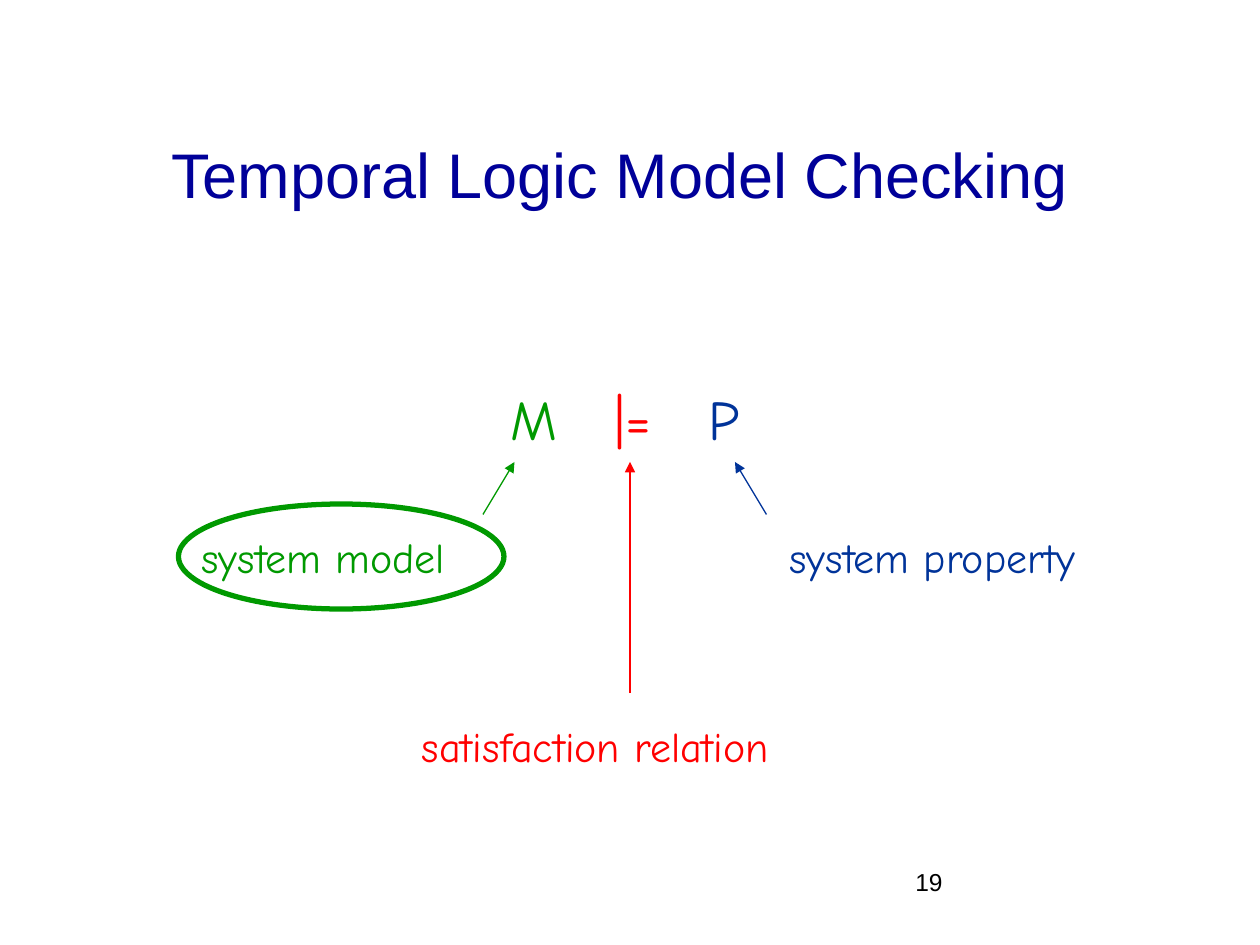
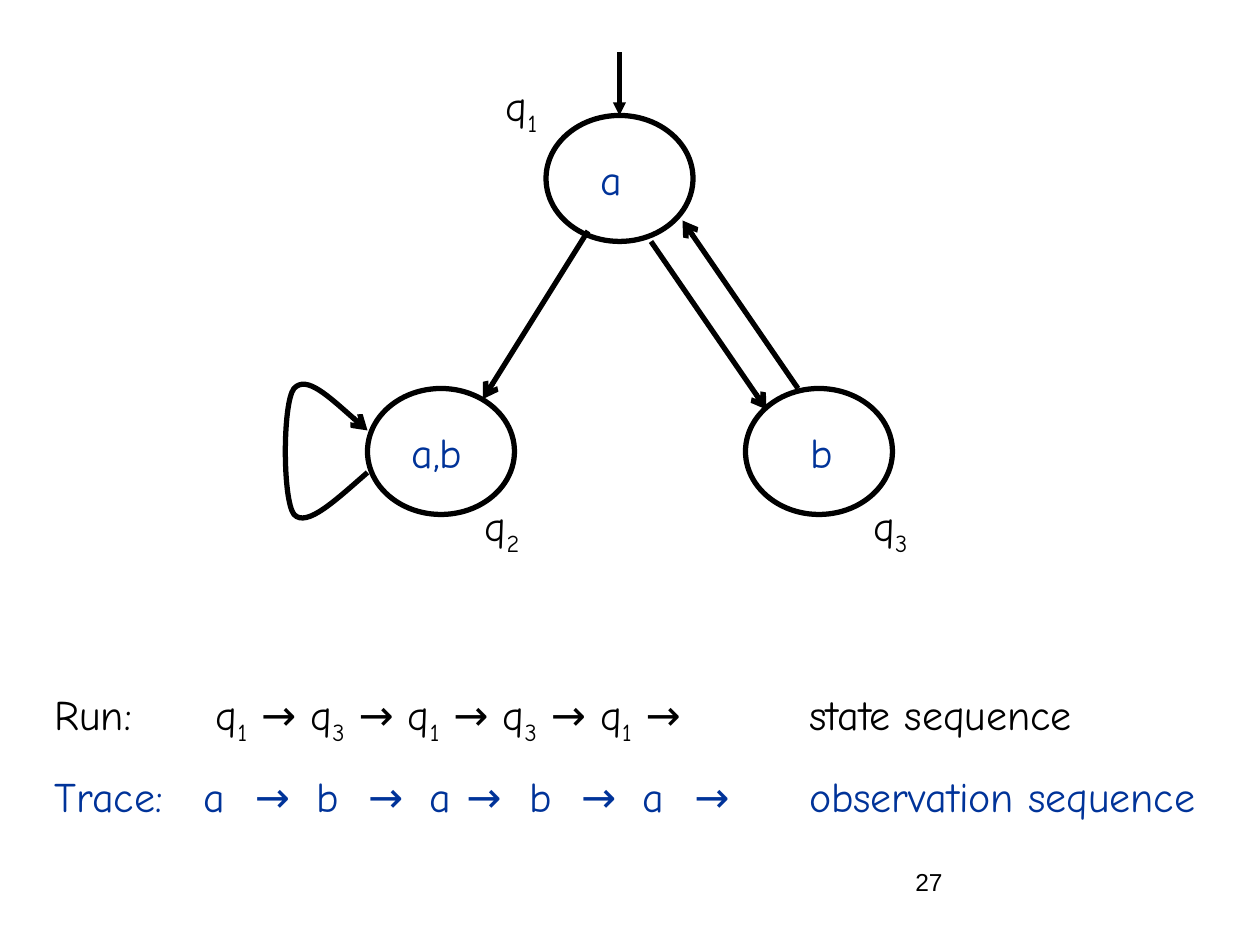
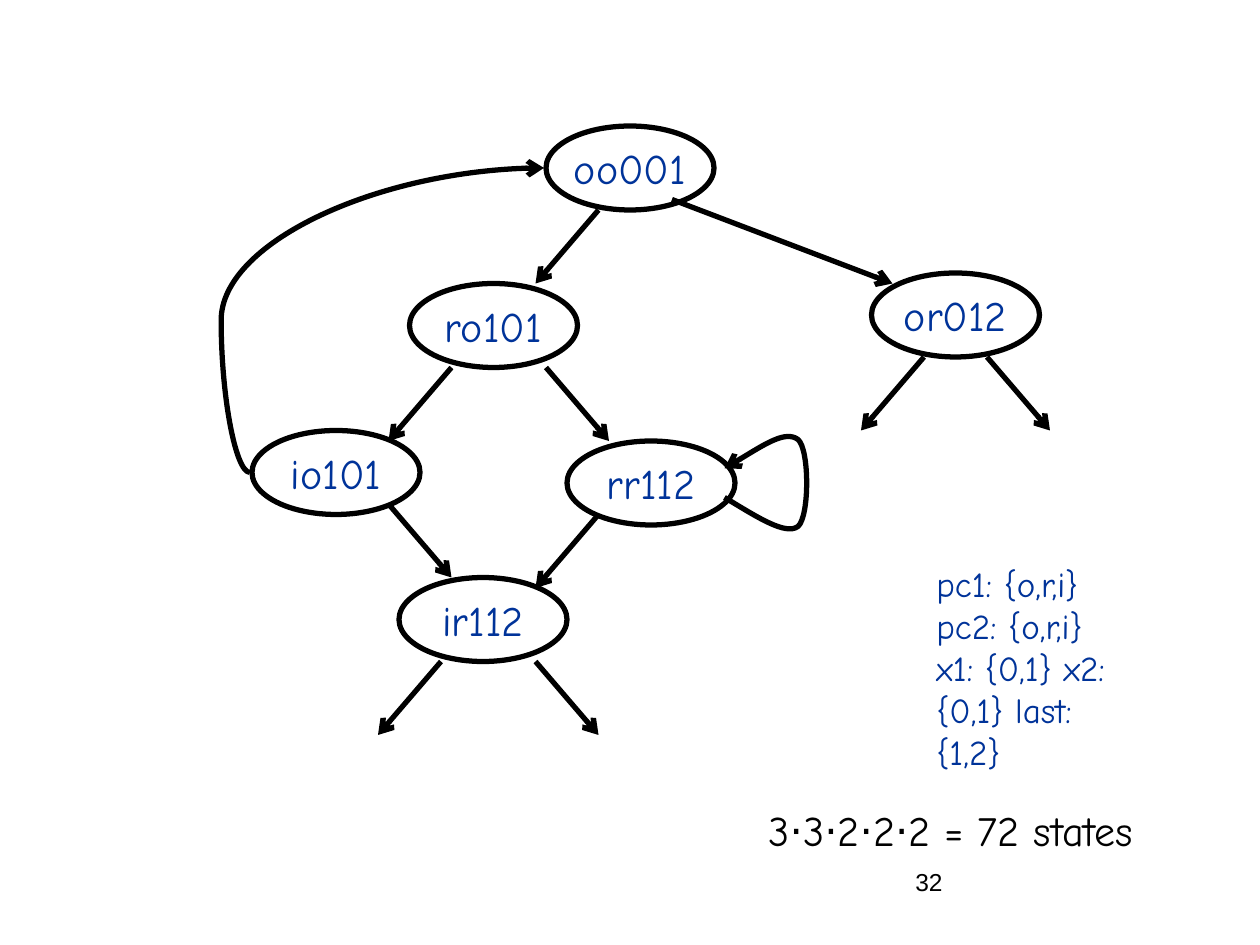
from dataclasses import dataclass

from lxml import etree
from pptx import Presentation
from pptx import util as u
from pptx.dml.color import RGBColor
from pptx.enum import shapes, text
from pptx.oxml.ns import qn


@dataclass(frozen=True)
class Theme:
    ink: str = "000000"
    navy: str = "000099"
    blue: str = "003399"
    green: str = "009900"
    red: str = "FF0000"
    head: str = "Arial"
    hand: str = "Comic Neue"
    title: int = 36
    big: int = 32
    body: int = 24
    note: int = 20
    page: int = 14
    thin: float = 0.75
    bold: float = 3


T = Theme()
COLS, ROWS = 120, 90


def sub(node, tag, **attrs):
    return etree.SubElement(node, qn(tag), attrs)


class Deck:
    """Holds the style and the current slide; lengths are grid cells."""

    def __init__(self):
        self.prs = Presentation()
        self.prs.slide_width, self.prs.slide_height = u.Inches(10), u.Inches(7.5)

    def grid(self, x, y):
        return (round(x * self.prs.slide_width / COLS),
                round(y * self.prs.slide_height / ROWS))

    def slide(self, page, title=None):
        layout = self.prs.slide_layouts[5 if title else 6]
        self.now = self.prs.slides.add_slide(layout)
        self.label(86, 82, 25, 6, str(page), size=T.page, font=T.head)
        if title:
            self.title(title)

    def title(self, words):
        box = self.now.shapes.title
        box.left, box.top = self.grid(8, 9)
        box.width, box.height = self.grid(102, 15)
        frame = box.text_frame
        frame.text = words
        frame.vertical_anchor = text.MSO_ANCHOR.MIDDLE
        para = frame.paragraphs[0]
        para.alignment = text.PP_ALIGN.CENTER
        self.style(para.runs[0], T.navy, T.title, T.head)

    def style(self, run, color, size=T.body, font=T.hand):
        run.font.name, run.font.size = font, u.Pt(size)
        run.font.color.rgb = RGBColor.from_string(color)

    def put(self, para, words, color, size=T.body, font=T.hand):
        """Add words; the sign after each underscore is a subscript."""
        first, *rest = words.split("_")
        parts = [(first, False)]
        for part in rest:
            parts += [(part[0], True), (part[1:], False)]
        for part, low in parts:
            if part:
                run = para.add_run()
                run.text = part
                self.style(run, color, size, font)
                if low:
                    run.font._element.set("baseline", "-25000")

    def tabs(self, para, stops, align="l"):
        row = sub(para._p.get_or_add_pPr(), "a:tabLst")
        for stop in stops:
            sub(row, "a:tab", pos=str(u.Inches(stop)), algn=align)

    def label(self, x, y, w, h, words="", color=T.ink, size=T.body, font=T.hand):
        box = self.now.shapes.add_textbox(*self.grid(x, y), *self.grid(w, h))
        frame = box.text_frame
        frame.word_wrap = True
        self.put(frame.paragraphs[0], words, color, size, font)
        return frame

    def pen(self, shape, color, width, head=None):
        shape.line.color.rgb = RGBColor.from_string(color)
        shape.line.width = u.Pt(width)
        if head:
            sub(shape._element.spPr.find(qn("a:ln")), "a:tailEnd", type=head)

    def oval(self, x, y, w, h, words="", color=T.ink):
        shape = self.now.shapes.add_shape(
            shapes.MSO_SHAPE.OVAL, *self.grid(x, y), *self.grid(w, h))
        shape.shadow.inherit = False
        shape.fill.background()
        self.pen(shape, color, T.bold)
        if words:
            frame = shape.text_frame
            frame.word_wrap = False
            frame.vertical_anchor = text.MSO_ANCHOR.MIDDLE
            para = frame.paragraphs[0]
            para.alignment = text.PP_ALIGN.CENTER
            self.put(para, words, T.blue)

    def arrow(self, start, end, color=T.ink, width=T.bold, head="arrow", bend=None):
        kind = shapes.MSO_CONNECTOR
        line = self.now.shapes.add_connector(
            kind.STRAIGHT if bend is None else kind.CURVE,
            *self.grid(*start), *self.grid(*end))
        self.pen(line, color, width, head)
        props = line._element.spPr
        sub(props, "a:effectLst")
        if bend is not None:
            guides = props.find(qn("a:prstGeom")).find(qn("a:avLst"))
            sub(guides, "a:gd", name="adj1", fmla=f"val {bend}")

    def loop(self, x, y, side, scale=1):
        """Draw a curved self-loop that opens at x and mirrors about y."""
        half = [(0, 2), (3, 4.6), (5.8, 7.3), (7, 6), (8.1, 4.6)]
        turn = half + [(dx, -dy) for dx, dy in reversed(half)]
        spots = [self.grid(x + side * dx, y + scale * dy) for dx, dy in turn]
        form = self.now.shapes.build_freeform(*spots[0])
        form.add_line_segments(spots[1:], close=False)
        shape = form.convert_to_shape()
        shape.shadow.inherit = False
        shape.fill.background()
        self.pen(shape, T.ink, T.bold, "arrow")
        # Each three line points become one cubic curve
        legs = list(shape._element.iter(qn("a:lnTo")))
        trail = legs[0].getparent()
        for i in range(0, len(legs), 3):
            curve = sub(trail, "a:cubicBezTo")
            for leg in legs[i:i + 3]:
                curve.append(leg[0])
                trail.remove(leg)


def logic(deck):
    deck.slide(19, "Temporal Logic Model Checking")
    # Formula
    para = deck.label(35, 36, 49, 7.5).paragraphs[0]
    deck.tabs(para, (1.22, 2.01, 2.73), "ctr")
    for sign, color in (("M", T.green), ("|=", T.red), ("P", T.blue)):
        deck.put(para, "\t" + sign, color, T.big)
    # Names of its parts, each with an arrow
    for x, y, w, words, color, start, end in (
            (18, 50, 31, "system model", T.green, (46, 49), (49, 44)),
            (74, 50, 38, "system property", T.blue, (73, 49), (70, 44)),
            (39, 68, 44, "satisfaction relation", T.red, (60, 66), (60, 44))):
        deck.label(x, y, w, 6, words, color)
        deck.arrow(start, end, color, T.thin, "triangle")
    deck.oval(17, 48, 31, 10, color=T.green)


def states(deck):
    deck.slide(27)
    # States with their values and names
    for x, y, value, vx, vy, name, nx, ny in (
            (52, 11, "a", 56, 14, "q_1", 47, 7),
            (35, 37, "a,b", 38, 40, "q_2", 45, 47),
            (71, 37, "b", 76, 40, "q_3", 82, 47)):
        deck.oval(x, y, 14, 12)
        deck.label(vx, vy, 9, 6, value, T.blue)
        deck.label(nx, ny, 9, 6, name)
    # Moves
    for start, end in (((56, 22), (46, 38)), ((62, 23), (73, 39)),
                       ((76, 37), (65, 21))):
        deck.arrow(start, end)
    deck.arrow((59, 5), (59, 11), width=2.5, head="triangle")
    deck.loop(35, 43, -1)
    # Run and trace
    frame = deck.label(4, 65, 116, 13.2)
    run, trace = frame.paragraphs[0], frame.add_paragraph()
    trace.space_before = u.Pt(14)
    deck.tabs(run, (1.28, 5.99))
    deck.put(run, "Run:\tq_1 → q_3 → q_1 → q_3 → q_1 →\tstate sequence", T.ink)
    deck.tabs(trace, (1.18, 1.59, 2.08, 2.49, 2.98, 3.27, 3.77, 4.18, 4.67, 5.08, 5.99))
    deck.put(trace, "Trace:\ta\t→\tb\t→\ta\t→\tb\t→\ta\t→\tobservation sequence", T.blue)


def space(deck):
    deck.slide(32)
    # States
    for x, y, name in ((52, 12, "oo001"), (54, 42, "rr112"), (39, 27, "ro101"),
                       (83, 26, "or012"), (38, 55, "ir112"), (24, 41, "io101")):
        deck.oval(x, y, 16, 8, name)
    # Moves: short ones all span the same step, left or right
    for x, y, side in ((57, 20, -1), (43, 35, -1), (57, 49, -1), (42, 63, -1),
                       (88, 34, -1), (37, 48, 1), (94, 34, 1), (52, 35, 1),
                       (51, 63, 1)):
        deck.arrow((x, y), (x + side * 6, y + 7))
    deck.arrow((64, 19), (85, 27))
    deck.arrow((23.8, 45), (51.8, 16), bend=-9800)
    deck.loop(69, 46, 1, 0.69)
    # Ranges and count
    deck.label(88, 53, 19, 21.2,
               "pc1: {o,r,i} pc2: {o,r,i} x1: {0,1} x2: {0,1} last: {1,2}",
               T.blue, T.note)
    deck.label(72, 76, 45, 6, "3⋅3⋅2⋅2⋅2 = 72 states")


def main():
    deck = Deck()
    for build in (logic, states, space):
        build(deck)
    deck.prs.save("out.pptx")


if __name__ == "__main__":
    main()
